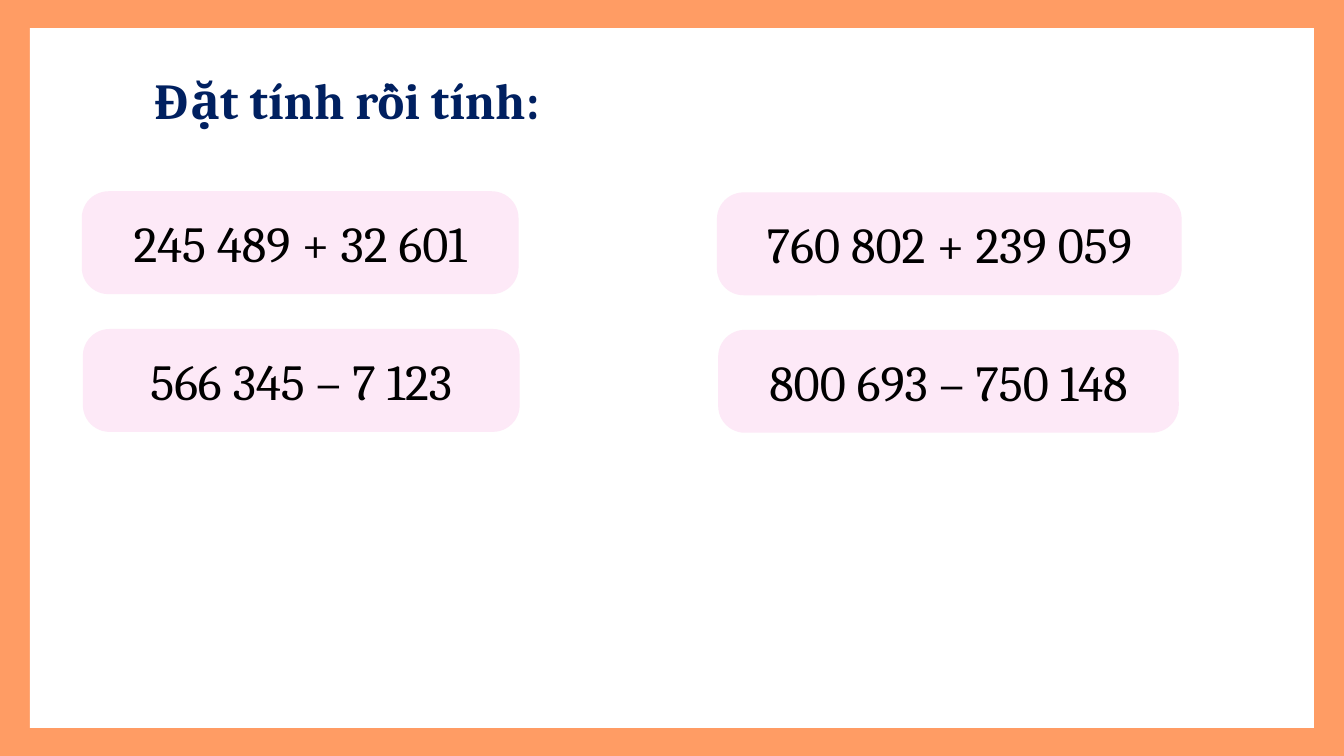
from pptx import Presentation
from pptx.dml.color import RGBColor
from pptx.enum.shapes import MSO_SHAPE
from pptx.enum.text import MSO_ANCHOR, MSO_AUTO_SIZE, PP_ALIGN
from pptx.util import Pt

RECTANGLE = MSO_SHAPE.RECTANGLE
ROUNDED = MSO_SHAPE.ROUNDED_RECTANGLE
TOP, MIDDLE = MSO_ANCHOR.TOP, MSO_ANCHOR.MIDDLE
CENTER, JUSTIFY = PP_ALIGN.CENTER, PP_ALIGN.JUSTIFY
NO_AUTOSIZE = MSO_AUTO_SIZE.NONE

COLORS = {
    "frame": "FF9C64",
    "page": "FFFFFF",
    "card": "FDE9F7",
    "title": "002060",
    "text": "000000",
}
CARD_HEIGHT = 73.5
EXERCISES = [
    ("245 489 + 32 601", 58.4, 136.6, 312),
    ("566 345 – 7 123", 59.2, 235, 312),
    ("760 802 + 239 059", 512.1, 137.4, 332),
    ("800 693 – 750 148", 513, 235.6, 329),
]


class ExerciseSlide:
    font_name = "Cambria"
    font_size = 36

    def __init__(self, presentation):
        self.slide = presentation.slides.add_slide(presentation.slide_layouts[5])

    def label(self, shape, text, color, alignment, anchor, bold=False):
        frame = shape.text_frame
        frame.text = text
        frame.word_wrap = True
        frame.auto_size = NO_AUTOSIZE
        frame.vertical_anchor = anchor
        paragraph = frame.paragraphs[0]
        paragraph.alignment = alignment
        font = paragraph.runs[0].font
        font.name = self.font_name
        font.size = Pt(self.font_size)
        font.bold = bold
        font.color.rgb = RGBColor.from_string(COLORS[color])

    def panel(self, kind, left, top, width, height, color):
        shape = self.slide.shapes.add_shape(
            kind, Pt(left), Pt(top), Pt(width), Pt(height)
        )
        shape.shadow.inherit = False
        shape.fill.solid()
        shape.fill.fore_color.rgb = RGBColor.from_string(COLORS[color])
        shape.line.fill.background()
        return shape

    def title(self, text, left, top, width, height):
        shape = self.slide.shapes.title
        shape.left, shape.top = Pt(left), Pt(top)
        shape.width, shape.height = Pt(width), Pt(height)
        self.label(shape, text, "title", JUSTIFY, TOP, bold=True)
        shape.element.getparent().append(shape.element)

    def card(self, text, left, top, width):
        shape = self.panel(ROUNDED, left, top, width, CARD_HEIGHT, "card")
        shape.adjustments[0] = 0.26
        self.label(shape, text, "text", CENTER, MIDDLE)


def main():
    presentation = Presentation()
    presentation.slide_width = Pt(960)
    presentation.slide_height = Pt(540)
    page = ExerciseSlide(presentation)
    page.panel(RECTANGLE, 0, 0, 960, 540, "frame")
    page.panel(RECTANGLE, 21.4, 20, 917.2, 500, "page")
    page.title("Đặt tính rồi tính:", 103, 45.4, 362, 51)
    for exercise in EXERCISES:
        page.card(*exercise)
    presentation.save("out.pptx")


if __name__ == "__main__":
    main()
